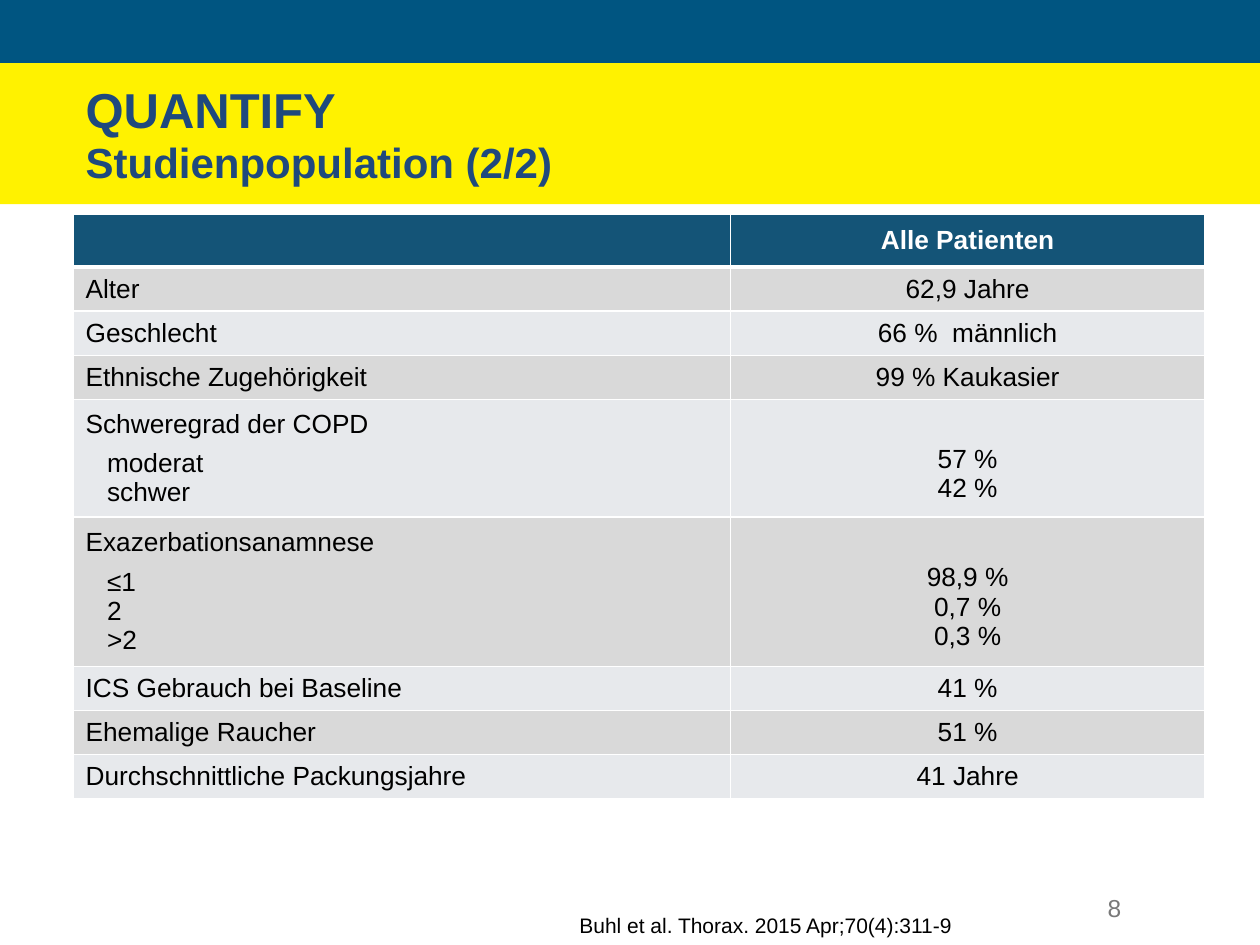
"""Build the QUANTIFY study population slide."""
from dataclasses import dataclass

from lxml.etree import SubElement
from pptx import Presentation
from pptx.dml.color import RGBColor
from pptx.enum.shapes import MSO_SHAPE as Preset
from pptx.enum.text import MSO_ANCHOR as Anchor, MSO_AUTO_SIZE as AutoSize, PP_ALIGN as Align
from pptx.oxml.ns import qn
from pptx.util import Inches, Pt

WIDTH, HEIGHT = 10, 7.5
COLORS = {
    "top": "005581", "band": "FFF200", "title": "1F497D", "header": "145477",
    "odd": "D9D9D9", "even": "E7E9EC", "white": "FFFFFF", "text": "000000",
    "number": "797979",
}
COLUMNS = (5.22, 3.76)
LINE = 0.24


@dataclass(frozen=True)
class Box:
    """Left, top, width and height in inches."""
    left: float
    top: float
    width: float
    height: float

    def lengths(self) -> tuple:
        """Return the four lengths for python-pptx."""
        return tuple(map(Inches, (self.left, self.top, self.width, self.height)))


@dataclass(frozen=True)
class Row:
    """One table row: a label, its values, its sub-labels and its height."""
    label: str
    values: tuple
    details: tuple = ()
    height: float = 0.33


ROWS = (
    Row("", ("Alle Patienten",), height=0.42),
    Row("Alter", ("62,9 Jahre",)),
    Row("Geschlecht", ("66 %  männlich",)),
    Row("Ethnische Zugehörigkeit", ("99 % Kaukasier",)),
    Row("Schweregrad der COPD", ("57 %", "42 %"), ("moderat", "schwer"), 0.93),
    Row("Exazerbationsanamnese", ("98,9 %", "0,7 %", "0,3 %"), ("≤1", "2", ">2"), 1.18),
    Row("ICS Gebrauch bei Baseline", ("41 %",), height=0.35),
    Row("Ehemalige Raucher", ("51 %",)),
    Row("Durchschnittliche Packungsjahre", ("41 Jahre",)),
)


def rgb(name: str) -> RGBColor:
    """Look up a named colour."""
    return RGBColor.from_string(COLORS[name])


def style(font, size: float, color: str = "text", bold: bool = False) -> None:
    """Apply the slide's typeface and the given format values."""
    for key, value in {"name": "Arial", "size": Pt(size), "bold": bold}.items():
        setattr(font, key, value)
    font.color.rgb = rgb(color)


def add_band(slide, box: Box, color: str) -> None:
    """Draw a plain coloured band."""
    shape = slide.shapes.add_shape(Preset.RECTANGLE, *box.lengths())
    shape.shadow.inherit = False
    shape.fill.solid()
    shape.fill.fore_color.rgb = rgb(color)
    shape.line.fill.background()


def add_title(slide, box: Box, lines: dict) -> None:
    """Fill the title placeholder and bring it in front of the bands."""
    title = slide.shapes.title
    title.left, title.top, title.width, title.height = box.lengths()
    frame = title.text_frame
    frame.auto_size, frame.vertical_anchor = AutoSize.NONE, Anchor.BOTTOM
    paragraph = frame.paragraphs[0]
    paragraph.alignment, paragraph.line_spacing = Align.LEFT, 0.95
    for index, (text, size) in enumerate(lines.items()):
        if index:
            paragraph.add_line_break()
        run = paragraph.add_run()
        run.text = text
        style(run.font, size, "title", True)
    slide.shapes._spTree.append(title._element)


def set_borders(cell, top: float, bottom: float) -> None:
    """Give a cell white borders with the given top and bottom widths."""
    properties = cell._tc.get_or_add_tcPr()
    for side, width in {"L": 1, "R": 1, "T": top, "B": bottom}.items():
        line = SubElement(properties, qn(f"a:ln{side}"), w=str(Pt(width)))
        fill = SubElement(line, qn("a:solidFill"))
        SubElement(fill, qn("a:srgbClr"), val=COLORS["white"])


def write_cell(cell, lines: tuple, align: Align, header: bool) -> None:
    """Write one paragraph per line into a table cell."""
    cell.vertical_anchor = Anchor.MIDDLE
    for index, text in enumerate(lines):
        frame = cell.text_frame
        paragraph = frame.add_paragraph() if index else frame.paragraphs[0]
        paragraph.alignment = align
        if align == Align.LEFT and index:
            paragraph._p.get_or_add_pPr().set("marL", str(Inches(0.17)))
        elif align == Align.LEFT and len(lines) > 1:
            paragraph.space_after = Pt(6)
        if text:
            run = paragraph.add_run()
            run.text = text
            style(run.font, 15, "white" if header else "text", header)


def add_population_table(slide, left: float, top: float) -> None:
    """Draw the study population table."""
    box = Box(left, top, sum(COLUMNS), sum(row.height for row in ROWS))
    table = slide.shapes.add_table(len(ROWS), len(COLUMNS), *box.lengths()).table
    for column, width in zip(table.columns, COLUMNS):
        column.width = Inches(width)
    for index, row in enumerate(ROWS):
        table.rows[index].height = Inches(row.height)
        header = index == 0
        color = "header" if header else "odd" if index % 2 else "even"
        label, value = table.cell(index, 0), table.cell(index, 1)
        for cell in (label, value):
            set_borders(cell, 3 if index == 1 else 1, 3 if header else 1)
            cell.fill.solid()
            cell.fill.fore_color.rgb = rgb(color)
        write_cell(label, (row.label, *row.details), Align.LEFT, header)
        write_cell(value, row.values, Align.CENTER, header)
        if row.details:
            value.margin_top = Inches(0.05 + LINE)


def add_note(slide, box: Box, text: str, size: float, color: str, align: Align, wrap: bool) -> None:
    """Add a single line of text at the foot of the slide."""
    frame = slide.shapes.add_textbox(*box.lengths()).text_frame
    frame.word_wrap = wrap
    paragraph = frame.paragraphs[0]
    paragraph.alignment = align
    run = paragraph.add_run()
    run.text = text
    style(run.font, size, color)


def main() -> None:
    """Assemble and save the presentation."""
    presentation = Presentation()
    presentation.slide_width, presentation.slide_height = Inches(WIDTH), Inches(HEIGHT)
    slide = presentation.slides.add_slide(presentation.slide_layouts[5])
    add_band(slide, Box(0, 0, WIDTH, 0.5), "top")
    add_band(slide, Box(0, 0.5, WIDTH, 1.12), "band")
    add_note(slide, Box(WIDTH * 2 / 3, 7.04, 2.33, 0.4), "8", 14, "number", Align.RIGHT, True)
    add_population_table(slide, 0.58, 1.7)
    add_title(slide, Box(0.58, 0.6, 9.07, 0.94), {"QUANTIFY": 28, "Studienpopulation (2/2)": 24})
    add_note(slide, Box(4.5, 7.19, 3.18, 0.3), "Buhl et al. Thorax. 2015 Apr;70(4):311-9",
             12, "text", Align.LEFT, False)
    presentation.save("out.pptx")


if __name__ == "__main__":
    main()
